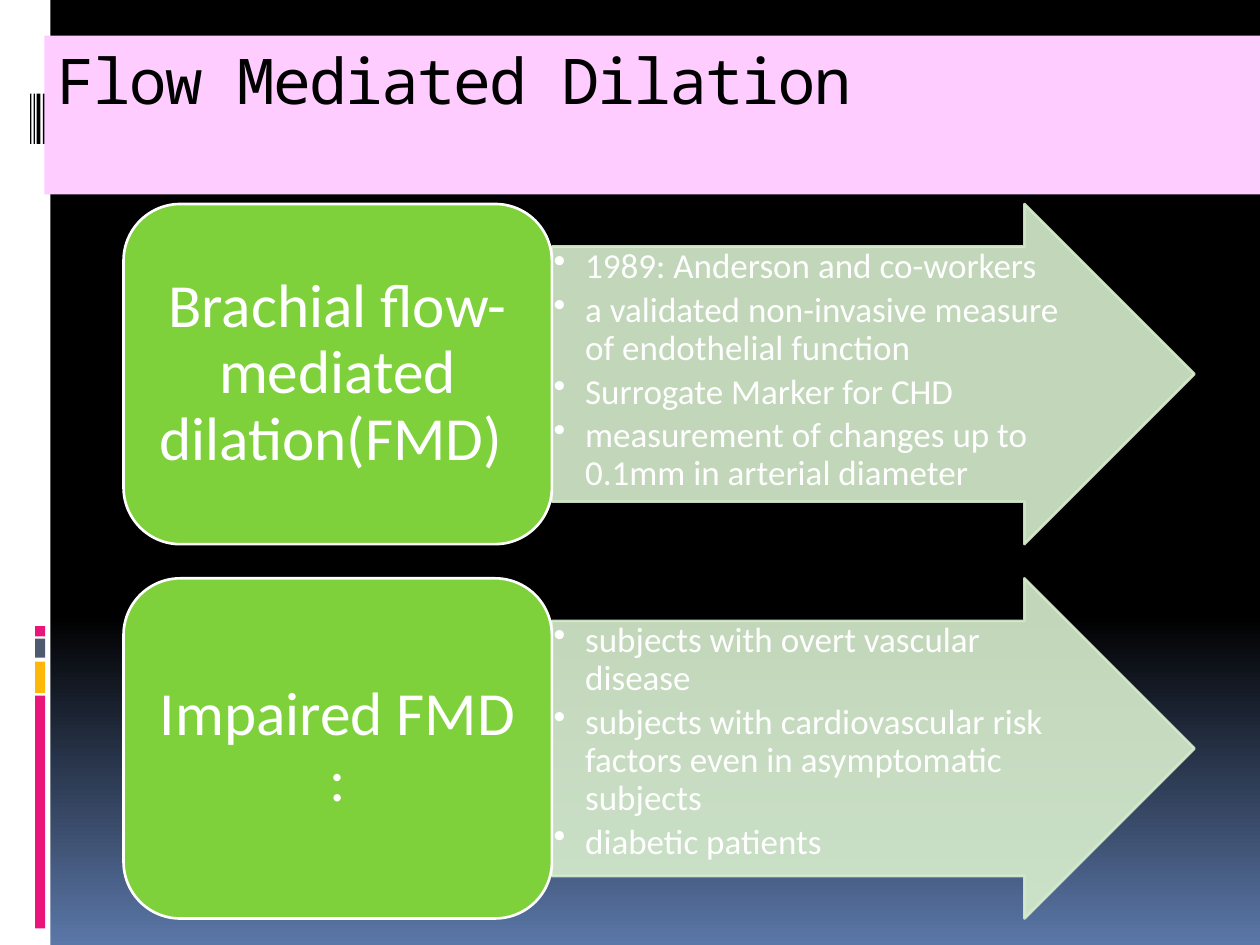
from lxml.etree import SubElement
from pptx import Presentation
from pptx.dml.color import RGBColor
from pptx.enum.shapes import MSO_SHAPE
from pptx.enum.text import MSO_ANCHOR, PP_ALIGN
from pptx.oxml.ns import qn
from pptx.util import Pt

COLORS = {
    "black": "000000", "white": "FFFFFF", "sky": "5B77A8",
    "pink": "EA157A", "amber": "FEB80A", "slate": "4E5B6F",
    "title": "FFCCFF", "green": "7FD13B", "pale": "D8EECE",
}

# left, top, width, height, color
SIDE_BARS = [
    (0, 0, 28.8, 540, "white"),
    (20, 397.6, 5.8, 133, "pink"),
    (20, 378, 5.8, 18, "amber"),
    (20, 365, 5.8, 10.8, "slate"),
    (20, 357.8, 5.8, 5.8, "pink"),
]
STRIPES = [(24.5, 3.6), (20.9, 2.2), (19.2, 0.7), (17.2, 0.7)]

ROWS = [
    ("Brachial flow-mediated dilation(FMD) ", [
        "1989: Anderson and co-workers",
        "a validated non-invasive measure of endothelial function",
        "Surrogate Marker for CHD",
        "measurement of changes up to 0.1mm in arterial diameter",
    ]),
    ("Impaired FMD :", [
        "subjects with overt vascular disease",
        "subjects with cardiovascular risk factors even in asymptomatic subjects",
        "diabetic patients",
    ]),
]
ROW_TOP, ROW_PITCH, ROW_HEIGHT = 116.6, 213.9, 194.4
BOX_LEFT, BOX_WIDTH, ARROW_WIDTH = 70.6, 244.8, 367.2


def rgb(name):
    return RGBColor.from_string(COLORS[name])


def set_background(page):
    fill = page.background.fill
    fill.gradient()
    fill.gradient_angle = 270
    for stop, position, name in zip(fill.gradient_stops, (0.65, 1), ("black", "sky")):
        stop.position = position
        stop.color.rgb = rgb(name)


def add_block(page, preset, left, top, width, height, color, line=None):
    block = page.shapes.add_shape(preset, Pt(left), Pt(top), Pt(width), Pt(height))
    block.shadow.inherit = False
    block.fill.solid()
    block.fill.fore_color.rgb = rgb(color)
    if line:
        block.line.color.rgb = rgb(line)
        block.line.width = Pt(1.5)
    else:
        block.line.fill.background()
    return block


def set_opacity(block, percent):
    """Make the fill and the line of a block partly transparent."""
    for color in block._element.spPr.iter(qn("a:srgbClr")):
        SubElement(color, qn("a:alpha"), val=str(percent * 1000))


def set_frame(block, anchor, horizontal, vertical):
    frame = block.text_frame
    frame.word_wrap = True
    frame.vertical_anchor = anchor
    frame.margin_left = frame.margin_right = Pt(horizontal)
    frame.margin_top = frame.margin_bottom = Pt(vertical)
    return frame


def add_span(para, text, size, font="Calibri", color="white"):
    span = para.add_run()
    span.text = text
    span.font.size = Pt(size)
    span.font.name = font
    span.font.color.rgb = rgb(color)
    return span


def set_bullet(para):
    para.level = 1
    properties = para._p.get_or_add_pPr()
    properties.set("marL", str(Pt(18)))
    properties.set("indent", str(-Pt(18)))
    SubElement(properties, qn("a:buChar"), char="•")


def add_arrow(page, top, points):
    arrow = add_block(page, MSO_SHAPE.RIGHT_ARROW, BOX_LEFT + BOX_WIDTH, top,
                      ARROW_WIDTH, ROW_HEIGHT, "pale", "pale")
    arrow.adjustments[0] = 0.75
    arrow.adjustments[1] = 0.5
    set_opacity(arrow, 90)
    frame = set_frame(arrow, MSO_ANCHOR.TOP, 1, 1)
    for index, point in enumerate(points):
        para = frame.add_paragraph() if index else frame.paragraphs[0]
        para.alignment = PP_ALIGN.LEFT
        para.line_spacing = 0.9
        para.space_after = Pt(3.5)
        set_bullet(para)
        add_span(para, point, 20)


def add_heading(page, top, text):
    box = add_block(page, MSO_SHAPE.ROUNDED_RECTANGLE, BOX_LEFT, top,
                    BOX_WIDTH, ROW_HEIGHT, "green", "white")
    para = set_frame(box, MSO_ANCHOR.MIDDLE, 10.5, 5.25).paragraphs[0]
    para.alignment = PP_ALIGN.CENTER
    para.line_spacing = 0.9
    add_span(para, text, 35)


def add_title(page):
    title = add_block(page, MSO_SHAPE.RECTANGLE, 25.4, 20.4, 694.6, 90.7, "title")
    para = set_frame(title, MSO_ANCHOR.TOP, 7.2, 3.6).paragraphs[0]
    para.alignment = PP_ALIGN.JUSTIFY
    span = add_span(para, "Flow Mediated Dilation ", 36, "Noto Sans Mono", "black")
    span.font._element.set("spc", "-100")


def main():
    deck = Presentation()
    deck.slide_width, deck.slide_height = Pt(720), Pt(540)
    page = deck.slides.add_slide(deck.slide_layouts[6])
    set_background(page)
    for left, top, width, height, color in SIDE_BARS:
        add_block(page, MSO_SHAPE.RECTANGLE, left, top, width, height, color)
    for left, width in STRIPES:
        add_block(page, MSO_SHAPE.RECTANGLE, left, 53.5, width, 28.8, "black")
    for index, (heading, points) in enumerate(ROWS):
        top = ROW_TOP + index * ROW_PITCH
        add_arrow(page, top, points)
        add_heading(page, top, heading)
    add_title(page)
    deck.save("out.pptx")


if __name__ == "__main__":
    main()
